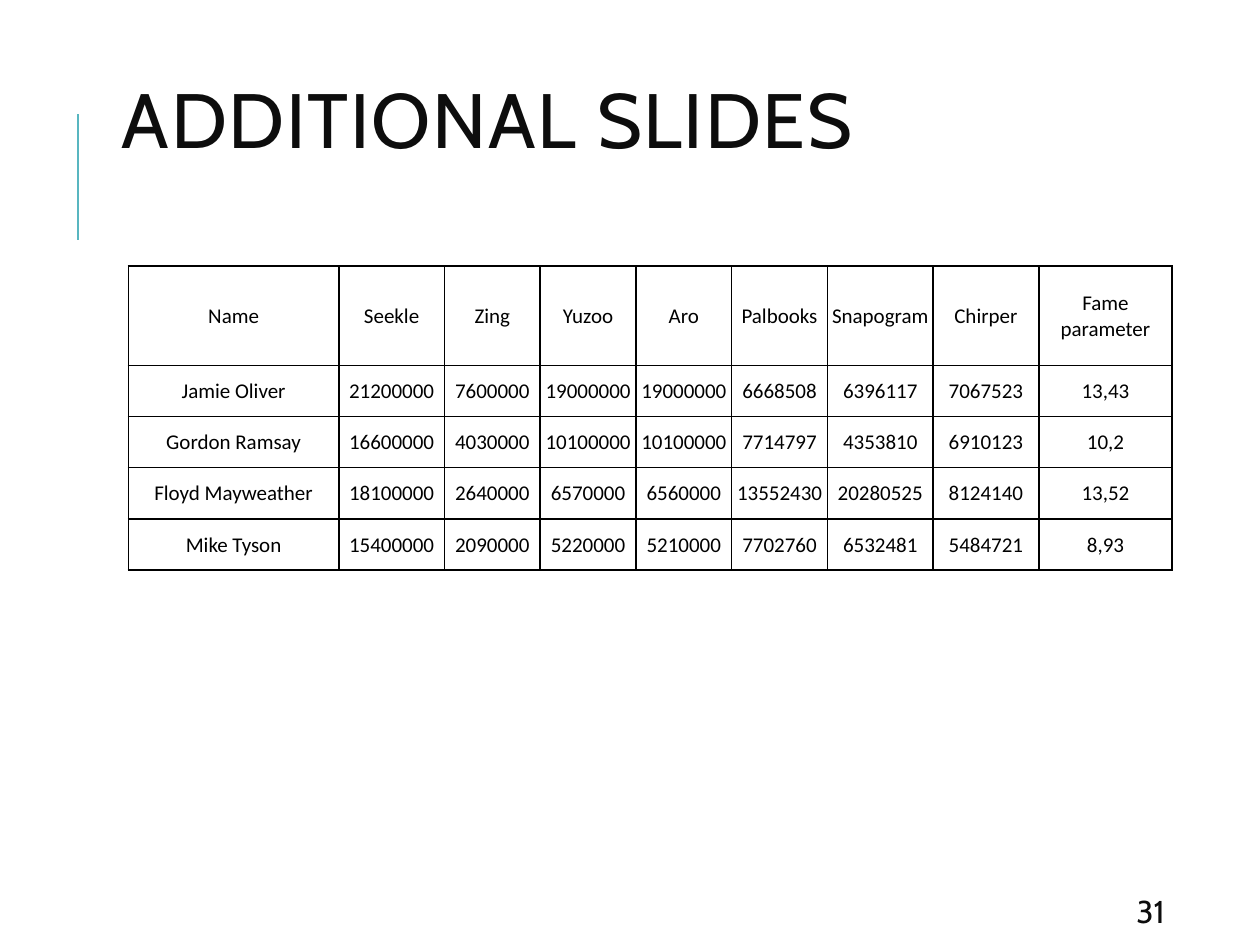
from dataclasses import dataclass

from lxml.etree import SubElement
from pptx import Presentation
from pptx.dml.color import RGBColor
from pptx.enum.shapes import MSO_CONNECTOR
from pptx.enum.text import MSO_ANCHOR, PP_ALIGN
from pptx.oxml.ns import qn
from pptx.util import Cm, Pt

INK = "0D0D0D"
BLACK = "000000"
TEAL = "58B6C0"


@dataclass
class Label:
    text: str
    left: float
    top: float
    width: float
    height: float
    size: float
    anchor: MSO_ANCHOR = MSO_ANCHOR.TOP
    line_spacing: float = 1.0
    letter_spacing: float = 0


@dataclass
class Celebrity:
    name: str
    counts: tuple[int, ...]
    fame: str


TITLE = Label("ADDITIONAL SLIDES", 2.13, 1.63, 20.24, 4.17, 44,
              line_spacing=0.8, letter_spacing=1)
SLIDE_NUMBER = Label("31", 22.58, 17.98, 2.03, 0.76, 18, MSO_ANCHOR.MIDDLE)

HEADERS = ["Name", "Seekle", "Zing", "Yuzoo", "Aro", "Palbooks",
           "Snapogram", "Chirper", "Fame parameter"]
CELEBRITIES = [
    Celebrity("Jamie Oliver", (21200000, 7600000, 19000000, 19000000,
                               6668508, 6396117, 7067523), "13,43"),
    Celebrity("Gordon Ramsay", (16600000, 4030000, 10100000, 10100000,
                                7714797, 4353810, 6910123), "10,2"),
    Celebrity("Floyd Mayweather", (18100000, 2640000, 6570000, 6560000,
                                   13552430, 20280525, 8124140), "13,52"),
    Celebrity("Mike Tyson", (15400000, 2090000, 5220000, 5210000,
                             7702760, 6532481, 5484721), "8,93"),
]
COLUMN_WIDTHS = [4.24, 2.13] + [1.93] * 4 + [2.13, 2.13, 2.69]
ROW_HEIGHTS = [2.01] + [1.03] * len(CELEBRITIES)


def color(value: str) -> RGBColor:
    return RGBColor.from_string(value)


def set_font(paragraph, name: str, size: float, value: str) -> None:
    paragraph.font.name = name
    paragraph.font.size = Pt(size)
    paragraph.font.color.rgb = color(value)


def add_label(slide, label: Label) -> None:
    shape = slide.shapes.add_textbox(Cm(label.left), Cm(label.top),
                                     Cm(label.width), Cm(label.height))
    frame = shape.text_frame
    frame.word_wrap = True
    frame.vertical_anchor = label.anchor
    frame.margin_left = frame.margin_right = Cm(0.33)
    frame.margin_top = frame.margin_bottom = Cm(0.18)
    paragraph = frame.paragraphs[0]
    run = paragraph.add_run()
    run.text = label.text
    paragraph.line_spacing = label.line_spacing
    set_font(paragraph, "Cabin", label.size, INK)
    if label.letter_spacing:
        run.font._element.set("spc", str(round(label.letter_spacing * 100)))


def add_accent_line(slide) -> None:
    line = slide.shapes.add_connector(MSO_CONNECTOR.STRAIGHT,
                                      Cm(1.57), Cm(4.83), Cm(1.57), Cm(2.29))
    line.line.color.rgb = color(TEAL)
    line.line.width = Pt(1.5)
    SubElement(line._element.spPr, qn("a:effectLst"))


def add_borders(cell) -> None:
    properties = cell._tc.get_or_add_tcPr()
    for position, side in enumerate(("lnL", "lnR", "lnT", "lnB")):
        border = SubElement(properties, qn(f"a:{side}"), w=str(Pt(1)))
        fill = SubElement(border, qn("a:solidFill"))
        SubElement(fill, qn("a:srgbClr"), val=BLACK)
        properties.insert(position, border)  # borders come before the fill


def fill_cell(cell, text: str) -> None:
    cell.text = text
    cell.fill.background()
    cell.vertical_anchor = MSO_ANCHOR.MIDDLE
    cell.margin_left = cell.margin_right = cell.margin_top = Cm(0.02)
    cell.margin_bottom = 0
    paragraph = cell.text_frame.paragraphs[0]
    paragraph.alignment = PP_ALIGN.CENTER
    set_font(paragraph, "Calibri", 12, BLACK)
    paragraph.font.bold = False
    add_borders(cell)


def add_fame_table(slide) -> None:
    rows = [HEADERS] + [[person.name, *map(str, person.counts), person.fame]
                        for person in CELEBRITIES]
    table = slide.shapes.add_table(
        len(rows), len(HEADERS), Cm(2.59), Cm(5.36),
        Cm(sum(COLUMN_WIDTHS)), Cm(sum(ROW_HEIGHTS))).table
    table.first_row = table.horz_banding = False
    for column, width in zip(table.columns, COLUMN_WIDTHS):
        column.width = Cm(width)
    for row, height, texts in zip(table.rows, ROW_HEIGHTS, rows):
        row.height = Cm(height)
        for cell, text in zip(row.cells, texts):
            fill_cell(cell, text)


def main() -> None:
    presentation = Presentation()
    presentation.slide_width, presentation.slide_height = Cm(25.4), Cm(19.05)
    slide = presentation.slides.add_slide(presentation.slide_layouts[6])

    # Heading with its accent line
    add_accent_line(slide)
    add_label(slide, TITLE)

    # Slide number
    add_label(slide, SLIDE_NUMBER)

    # Search and follower counts
    add_fame_table(slide)

    presentation.save("out.pptx")


if __name__ == "__main__":
    main()
